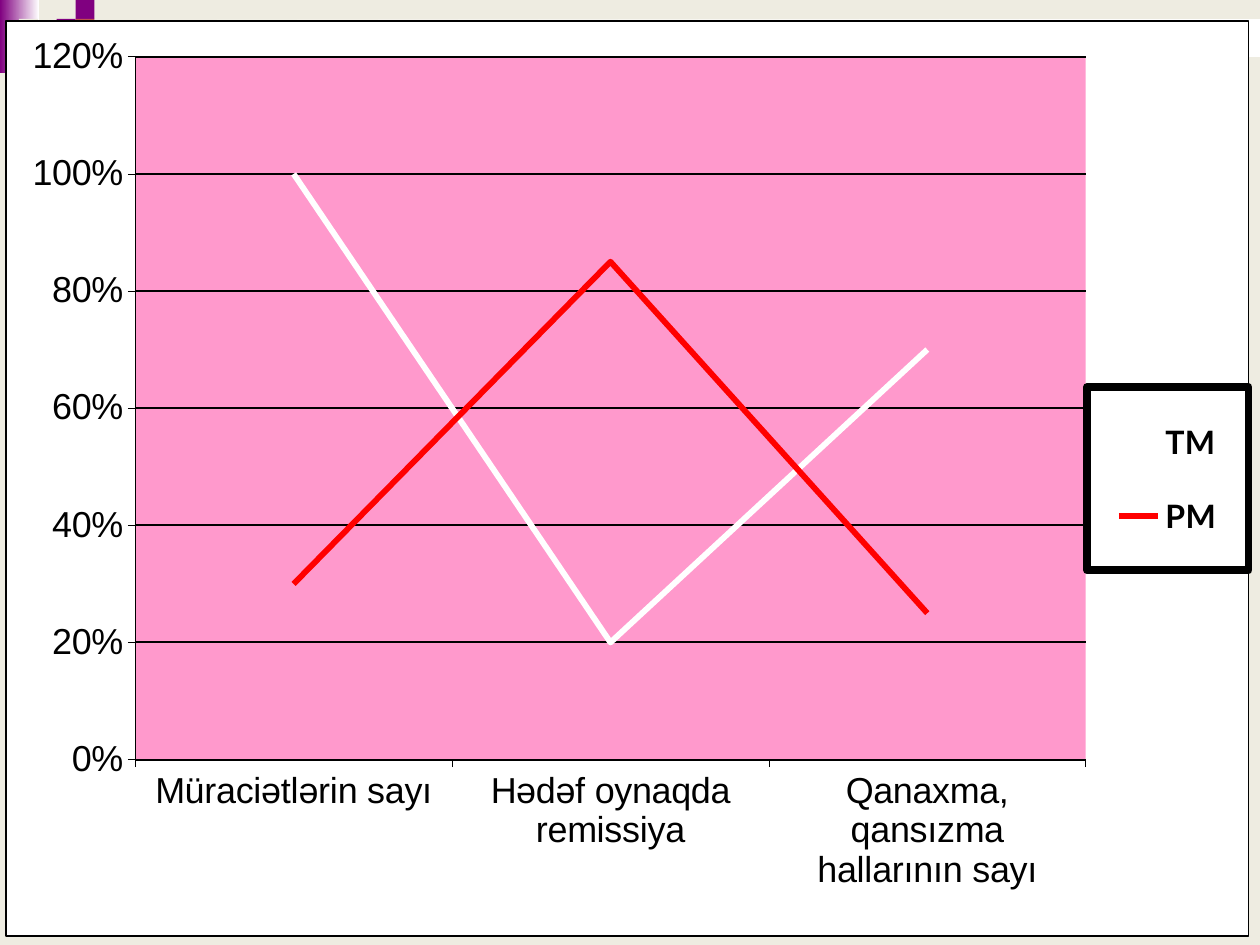
from lxml import etree
from pptx import Presentation
from pptx import util as u
from pptx.chart.data import CategoryChartData
from pptx.dml.color import RGBColor
from pptx.enum import chart as ch
from pptx.enum import shapes
from pptx.oxml import parse_xml
from pptx.oxml.ns import nsdecls, qn

PURPLE = RGBColor(0x80, 0x00, 0x80)
BRICK = RGBColor(0xC0, 0x50, 0x4D)
CREAM = RGBColor(0xEE, 0xEC, 0xE1)
PINK = RGBColor(0xFF, 0x99, 0xCC)
RED = RGBColor(0xFF, 0x00, 0x00)
WHITE = RGBColor(0xFF, 0xFF, 0xFF)
BLACK = RGBColor(0x00, 0x00, 0x00)

CATEGORIES = ["Müraciətlərin sayı", "Hədəf oynaqda remissiya", "Qanaxma, qansızma hallarının sayı"]
TREATMENTS = {"TM": ((1, 0.2, 0.7), WHITE), "PM": ((0.3, 0.85, 0.25), RED)}


def set_attributes(target, values):
    """Set each named value on the target."""
    for name, value in values.items():
        setattr(target, name, value)


def set_font(font, name, size, bold):
    """Format a black chart font."""
    set_attributes(font, {"name": name, "size": u.Pt(size), "bold": bold})
    font.color.rgb = BLACK


def set_line(line, color, width):
    """Give a line its colour and width in points."""
    line.color.rgb = color
    line.width = u.Pt(width)


def area_format(fill, width=None):
    """Return chart area properties with a fill and an optional black border."""
    border = "<a:ln><a:noFill/></a:ln>"
    if width:
        border = (f'<a:ln w="{u.Pt(width)}"><a:solidFill><a:srgbClr val="{BLACK}"/>'
                  "</a:solidFill></a:ln>")
    return parse_xml(f'<c:spPr {nsdecls("c", "a")}><a:solidFill><a:srgbClr val="{fill}"/>'
                     f"</a:solidFill>{border}</c:spPr>")


def manual_layout(left, top, width, height, inner=False):
    """Return a chart layout in fractions of the chart box."""
    layout = parse_xml(f'<c:layout {nsdecls("c")}><c:manualLayout/></c:layout>')
    values = {"layoutTarget": "inner"} if inner else {}
    values.update(xMode="edge", yMode="edge", x=left, y=top, w=width, h=height)
    for tag, value in values.items():
        etree.SubElement(layout[0], qn(f"c:{tag}")).set("val", str(value))
    return layout


def add_block(slide, left, top, width, height, *colors):
    """Add a borderless rectangle in one colour or a left-to-right gradient."""
    block = slide.shapes.add_shape(shapes.MSO_SHAPE.RECTANGLE, *map(u.Inches, (left, top, width, height)))
    block.shadow.inherit = False
    block.line.fill.background()
    if len(colors) == 1:
        block.fill.solid()
        block.fill.fore_color.rgb = colors[0]
    else:
        block.fill.gradient()
        block.fill.gradient_angle = 0
        for stop, color in zip(block.fill.gradient_stops, colors):
            stop.color.rgb = color


def add_corner(slide, left, top, unit):
    """Build the corner ornament on a grid of square units."""
    add_block(slide, left, top, 0.31, 0.58, PURPLE, WHITE)
    add_block(slide, left + 3 * unit, top + unit, 9.55, 2 * unit, CREAM, WHITE)
    for column, row, color in ((3, 1, PURPLE), (4, 0, PURPLE), (4, 1, BRICK), (1, 1, CREAM)):
        add_block(slide, left + column * unit, top + row * unit, unit, unit, color)


def format_axes(chart):
    """Format both axes and the gridlines."""
    for axis in (chart.category_axis, chart.value_axis):
        set_attributes(axis, {"major_tick_mark": ch.XL_TICK_MARK.OUTSIDE,
                              "minor_tick_mark": ch.XL_TICK_MARK.NONE})
        set_font(axis.tick_labels.font, "Arial", 20.6, False)
        set_line(axis.format.line, BLACK, 0.28)
    values = chart.value_axis
    set_attributes(values, {"minimum_scale": 0, "maximum_scale": 1.2, "major_unit": 0.2,
                            "has_major_gridlines": True})
    set_attributes(values.tick_labels, {"number_format": "0%", "number_format_is_linked": False})
    set_line(values.major_gridlines.format.line, BLACK, 1.11)


def format_legend(chart):
    """Place the framed legend at the right."""
    chart.has_legend = True
    legend = chart.legend
    set_attributes(legend, {"position": ch.XL_LEGEND_POSITION.RIGHT, "include_in_layout": False})
    set_font(legend.font, "Lato", 18.4, True)
    element = legend._element
    for old in element.findall(qn("c:layout")):
        element.remove(old)
    element.find(qn("c:legendPos")).addnext(manual_layout(0.87, 0.4, 0.13, 0.2))
    element.find(qn("c:txPr")).addprevious(area_format(WHITE, 4.5))


def add_treatment_chart(slide, left, top, width, height):
    """Add the line chart that compares the two treatments."""
    data = CategoryChartData(number_format="0%")
    data.categories = CATEGORIES
    for name, (shares, _) in TREATMENTS.items():
        data.add_series(name, shares)
    chart = slide.shapes.add_chart(
        ch.XL_CHART_TYPE.LINE, *map(u.Inches, (left, top, width, height)), data).chart
    chart.has_title = False
    set_font(chart.font, "Lato", 20, True)
    plot = chart.plots[0]
    plot.vary_by_categories = False
    for series, (_, color) in zip(plot.series, TREATMENTS.values()):
        series.smooth = False
        series.marker.style = ch.XL_MARKER_STYLE.NONE
        set_line(series.format.line, color, 3.34)
    format_axes(chart)
    format_legend(chart)
    space = chart._chartSpace
    space.find(qn("c:txPr")).addprevious(area_format(WHITE, 1.11))
    plot_area = space.find(qn("c:chart")).find(qn("c:plotArea"))
    for old in plot_area.findall(qn("c:layout")):
        plot_area.remove(old)
    plot_area.insert(0, manual_layout(0.104, 0.039, 0.765, 0.768, inner=True))
    plot_area.append(area_format(PINK))


def main():
    """Build and save the slide."""
    deck = Presentation()
    set_attributes(deck, {"slide_width": u.Inches(10), "slide_height": u.Inches(7.5)})
    slide = deck.slides.add_slide(deck.slide_layouts[6])
    slide.background.fill.solid()
    slide.background.fill.fore_color.rgb = CREAM
    add_corner(slide, 0, 0, 0.15)
    add_treatment_chart(slide, 0.04, 0.16, 9.9, 7.28)
    deck.save("out.pptx")


if __name__ == "__main__":
    main()
